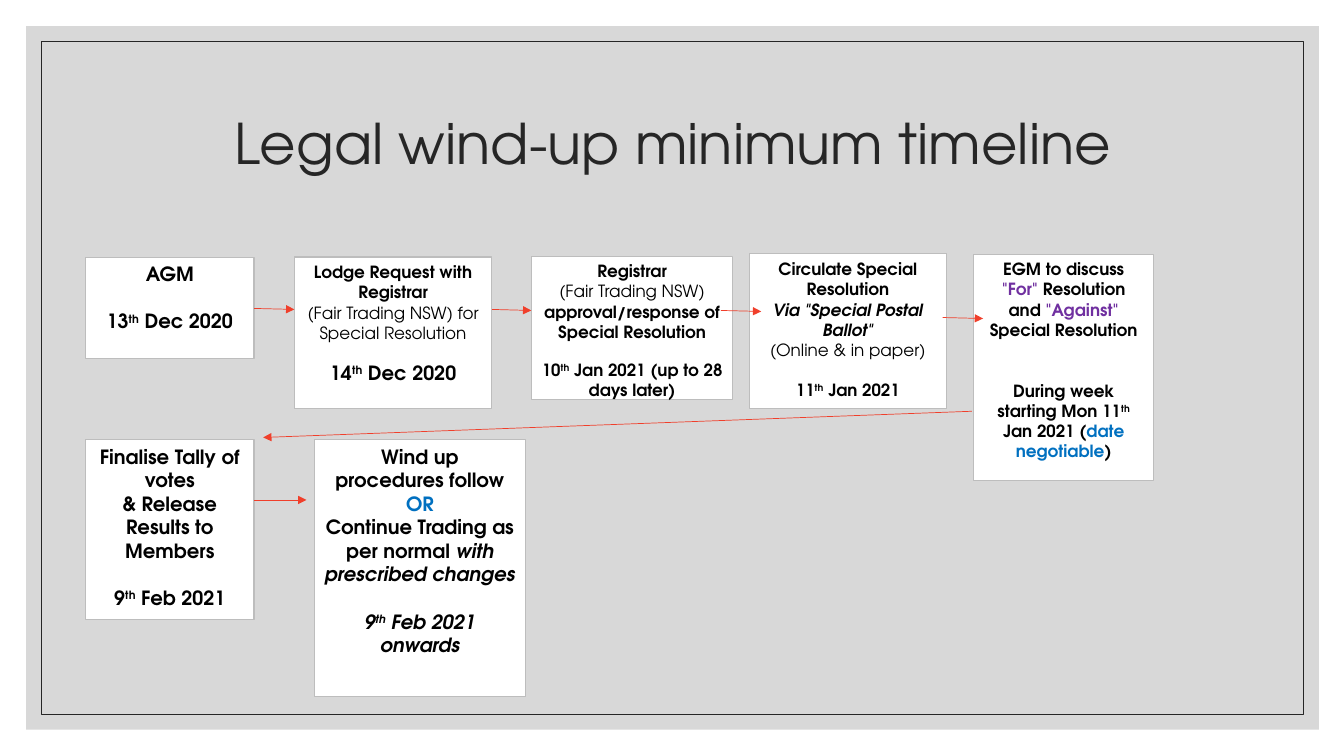
"""Build the legal wind-up timeline slide."""
from dataclasses import dataclass

from lxml.etree import SubElement
from pptx import Presentation
from pptx.dml.color import RGBColor
from pptx.enum.shapes import MSO_CONNECTOR, MSO_SHAPE
from pptx.enum.text import MSO_ANCHOR, PP_ALIGN
from pptx.oxml.ns import qn
from pptx.util import Emu, Pt

PX = 9144
FONT = "TeX Gyre Adventor"
WHITE = RGBColor(0xFF, 0xFF, 0xFF)
BLACK = RGBColor(0x00, 0x00, 0x00)
INK = RGBColor(0x26, 0x26, 0x26)
PANEL = RGBColor(0xBF, 0xBF, 0xBF)
BORDER = RGBColor(0xBD, 0xBD, 0xBD)
RED = RGBColor(0xF0, 0x3F, 0x2B)
PURPLE = RGBColor(0x70, 0x30, 0xA0)
BLUE = RGBColor(0x00, 0x70, 0xC0)


@dataclass
class Run:
    """A stretch of text in one style."""
    text: str
    bold: bool = True
    italic: bool = False
    color: RGBColor = BLACK
    raised: bool = False


@dataclass
class Para:
    """A centred paragraph with the gap above it in points."""
    runs: list[Run]
    size: int = 12
    before: float = 0
    spacing: float = 1.0


@dataclass
class Step:
    """A box of the timeline."""
    x: int
    y: int
    w: int
    h: int
    paras: list[Para]


@dataclass
class Arrow:
    """A straight arrow between two points."""
    x1: int
    y1: int
    x2: int
    y2: int


def date(day: str, rest: str, italic: bool = False) -> list[Run]:
    """Return the runs of a date with a raised ordinal."""
    return [Run(day, italic=italic), Run("th", italic=italic, raised=True),
            Run(rest, italic=italic)]


STEPS = [
    Step(85, 255, 167, 101, [
        Para([Run("AGM")], 14),
        Para(date("13", " Dec 2020"), 14, 17)]),
    Step(292, 255, 196, 150, [
        Para([Run("Lodge Request with Registrar")]),
        Para([Run("(Fair Trading NSW) for Special Resolution", bold=False)]),
        Para(date("14", " Dec 2020"), 14, 13)]),
    Step(527, 254, 200, 142, [
        Para([Run("Registrar")]),
        Para([Run("(Fair Trading NSW) ", bold=False),
              Run("approval/response of Special Resolution")]),
        Para(date("10", " Jan 2021 (up to 28 days later)"), 12, 13)]),
    Step(743, 252, 196, 153, [
        Para([Run("Circulate Special Resolution")]),
        Para([Run('Via "Special Postal Ballot"', italic=True)]),
        Para([Run("(Online & in paper)", bold=False)]),
        Para(date("11", " Jan 2021"), 12, 14.5)]),
    Step(966, 252, 178, 225, [
        Para([Run("EGM to discuss "), Run('"For" ', color=PURPLE),
              Run("Resolution and "), Run('"Against" ', color=PURPLE),
              Run("Special Resolution")]),
        Para([Run("During week starting Mon "), *date("11", " Jan 2021 ("),
              Run("date negotiable", color=BLUE), Run(")")], 12, 29)]),
    Step(85, 436, 167, 179, [
        Para([Run("Finalise Tally of votes")], 14),
        Para([Run("& Release Results to Members")], 14),
        Para(date("9", " Feb 2021"), 14, 17)]),
    Step(312, 436, 209, 255, [
        Para([Run("Wind up procedures follow")], 14),
        Para([Run("OR", color=BLUE)], 14),
        Para([Run("Continue Trading as per normal "),
              Run("with prescribed changes", italic=True)], 14),
        Para(date("9", " Feb 2021 onwards", italic=True), 14, 17)]),
]

ARROWS = [
    Arrow(252, 306, 292, 307),
    Arrow(488, 307, 527, 308),
    Arrow(715, 308, 755, 309),
    Arrow(935, 315, 975, 316),
    Arrow(964, 408, 261, 434),
    Arrow(252, 496, 304, 496),
]


def px(*values: int) -> list[Emu]:
    """Turn px into EMU."""
    return [Emu(v * PX) for v in values]


def write(tf, paras: list[Para]) -> None:
    """Fill a text frame with centred paragraphs."""
    tf.word_wrap = True
    for i, para in enumerate(paras):
        p = tf.add_paragraph() if i else tf.paragraphs[0]
        p.alignment = PP_ALIGN.CENTER
        p.space_before = Pt(para.before)
        p.line_spacing = para.spacing
        for run in para.runs:
            r = p.add_run()
            r.text = run.text
            r.font.name = FONT
            r.font.size = Pt(para.size)
            r.font.bold = run.bold
            r.font.italic = run.italic
            r.font.color.rgb = run.color
            if run.raised:
                r.font._element.set("baseline", "30000")


def add_rect(s, x: int, y: int, w: int, h: int, fill: RGBColor | None,
             line: RGBColor | None, width: float = 0.75):
    """Add a flat rectangle."""
    sp = s.shapes.add_shape(MSO_SHAPE.RECTANGLE, *px(x, y, w, h))
    sp.shadow.inherit = False
    if fill is None:
        sp.fill.background()
    else:
        sp.fill.solid()
        sp.fill.fore_color.rgb = fill
    if line is None:
        sp.line.fill.background()
    else:
        sp.line.color.rgb = line
        sp.line.width = Pt(width)
    return sp


def add_frame(s) -> None:
    """Add the translucent panel and its thin inner border."""
    panel = add_rect(s, 26, 26, 1282, 698, PANEL, None)
    color = panel._element.spPr.find(f"{qn('a:solidFill')}/{qn('a:srgbClr')}")
    SubElement(color, qn("a:alpha"), val="60000")
    add_rect(s, 41, 41, 1252, 668, None, INK, 0.5)


def add_title(s) -> None:
    """Add the slide title."""
    tf = s.shapes.add_textbox(*px(117, 70, 1100, 150)).text_frame
    tf.vertical_anchor = MSO_ANCHOR.MIDDLE
    title = Run("Legal wind-up minimum timeline", bold=False, color=INK)
    write(tf, [Para([title], 40, spacing=0.9)])


def add_step(s, step: Step) -> None:
    """Add a timeline box with its text."""
    sp = add_rect(s, step.x, step.y, step.w, step.h, WHITE, BORDER)
    sp.text_frame.vertical_anchor = MSO_ANCHOR.TOP
    write(sp.text_frame, step.paras)


def add_arrow(s, arrow: Arrow) -> None:
    """Add a red arrow."""
    cx = s.shapes.add_connector(
        MSO_CONNECTOR.STRAIGHT, *px(arrow.x1, arrow.y1, arrow.x2, arrow.y2))
    cx.line.color.rgb = RED
    cx.line.width = Pt(0.5)
    SubElement(cx.line._get_or_add_ln(), qn("a:tailEnd"), type="triangle")
    SubElement(cx._element.spPr, qn("a:effectLst"))


def main() -> None:
    """Build and save the slide."""
    prs = Presentation()
    prs.slide_width, prs.slide_height = px(1333, 750)
    s = prs.slides.add_slide(prs.slide_layouts[6])
    add_frame(s)
    add_title(s)
    for step in STEPS:
        add_step(s, step)
    for arrow in ARROWS:
        add_arrow(s, arrow)
    prs.save("out.pptx")


if __name__ == "__main__":
    main()
